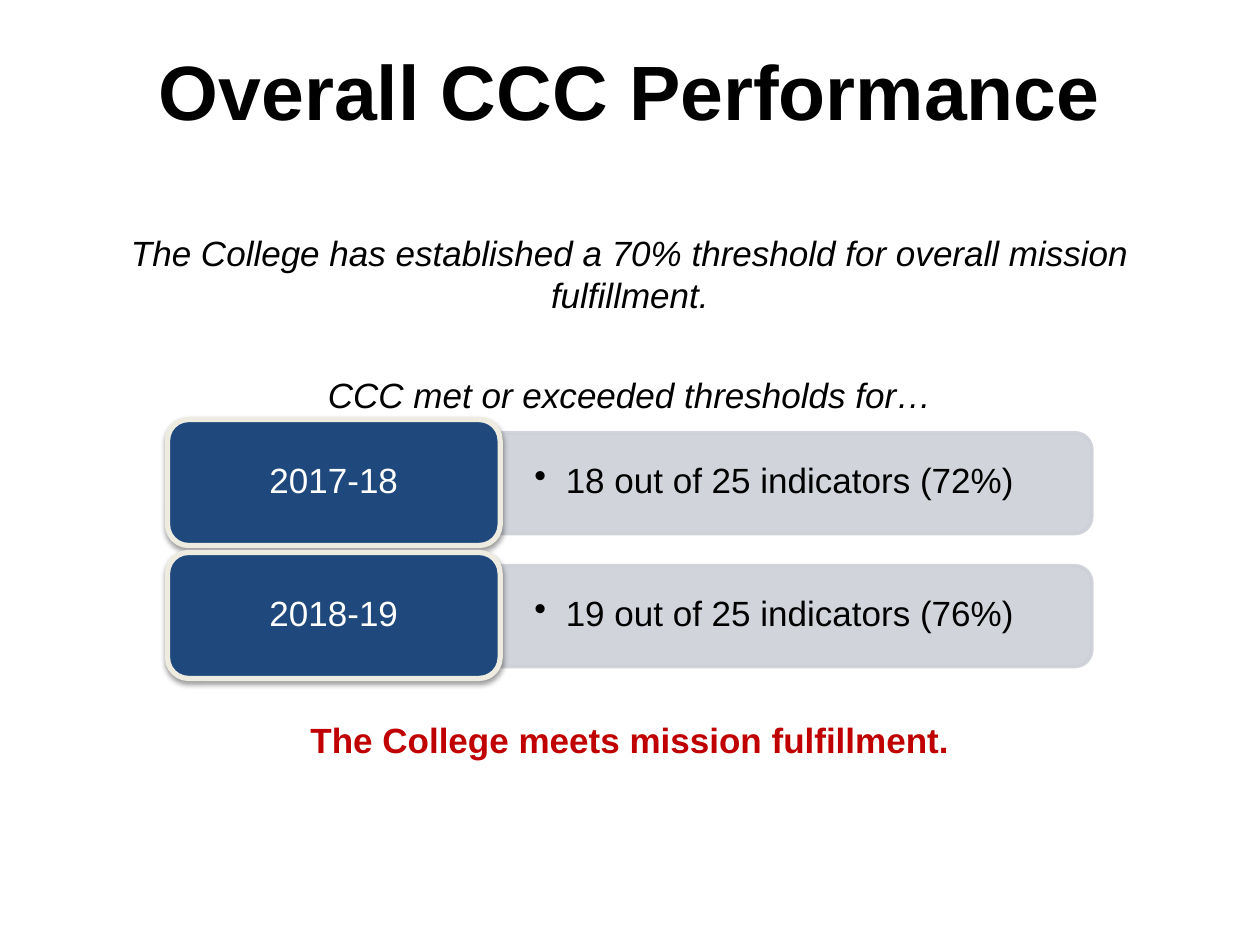
import pptx
import pptx.dml.color
import pptx.enum.shapes
import pptx.enum.text
import pptx.oxml
import pptx.oxml.ns
import pptx.util
import lxml.etree

Inches = pptx.util.Inches
Pt = pptx.util.Pt
qn = pptx.oxml.ns.qn
COLORS = {"black": "000000", "white": "FFFFFF", "red": "C00000",
          "navy": "1F497D", "cream": "EEECE1", "bar": "CDD0D7"}


def rgb(name):
    return pptx.dml.color.RGBColor.from_string(COLORS[name])


def write_text(paragraph, text, size=20, color="black", bold=False, italic=False,
               align="CENTER", before=0, line_spacing=1.0, bullet=False):
    paragraph.alignment = getattr(pptx.enum.text.PP_ALIGN, align)
    paragraph.space_before = Pt(before)
    paragraph.line_spacing = line_spacing
    if bullet:
        properties = paragraph._p.get_or_add_pPr()
        properties.set("marL", str(Inches(0.25)))
        properties.set("indent", str(Inches(-0.25)))
        lxml.etree.SubElement(properties, qn("a:buChar"), char="•")
    run = paragraph.add_run()
    run.text = text
    run.font.name = "Arial"
    run.font.size = Pt(size)
    run.font.bold = bold
    run.font.italic = italic
    run.font.color.rgb = rgb(color)


presentation = pptx.Presentation()
presentation.slide_width = Inches(10)
presentation.slide_height = Inches(7.5)
slide = presentation.slides.add_slide(presentation.slide_layouts[6])
shapes = slide.shapes

title = shapes.add_textbox(Inches(0.5), Inches(0.3), Inches(9), Inches(1.25))
title.text_frame.word_wrap = True
write_text(title.text_frame.paragraphs[0], "Overall CCC Performance", size=44, bold=True)

body = shapes.add_textbox(Inches(0.5), Inches(1.75), Inches(9), Inches(4.95))
body.text_frame.word_wrap = True
body.text_frame.margin_top = Inches(0.09)
write_text(body.text_frame.paragraphs[0],
           "The College has established a 70% threshold for overall mission fulfillment.",
           italic=True)
write_text(body.text_frame.add_paragraph(), "CCC met or exceeded thresholds for…",
           italic=True, before=33)
write_text(body.text_frame.add_paragraph(), "The College meets mission fulfillment.",
           color="red", bold=True, before=173)

results = [("2017-18", "18 out of 25 indicators (72%)"),
           ("2018-19", "19 out of 25 indicators (76%)")]
for row, (year, result) in enumerate(results):
    top = 3.33 + 1.055 * row

    bar = shapes.add_shape(pptx.enum.shapes.MSO_SHAPE.ROUND_2_SAME_RECTANGLE,
                           Inches(5.92), Inches(top - 1.84), Inches(0.8), Inches(4.69))
    bar.rotation = 90
    bar.shadow.inherit = False
    bar.fill.solid()
    bar.fill.fore_color.rgb = rgb("bar")
    bar.line.color.rgb = rgb("bar")
    bar.line.width = Pt(2)
    for color in bar._element.spPr.iter(qn("a:srgbClr")):
        lxml.etree.SubElement(color, qn("a:alpha"), val="90000")

    detail = shapes.add_textbox(Inches(3.97), Inches(top + 0.14), Inches(4.65), Inches(0.72))
    frame = detail.text_frame
    frame.word_wrap = True
    frame.vertical_anchor = pptx.enum.text.MSO_ANCHOR.MIDDLE
    frame.margin_left = frame.margin_right = Inches(0.27)
    frame.margin_top = frame.margin_bottom = Inches(0.14)
    write_text(frame.paragraphs[0], result, align="LEFT", line_spacing=0.9, bullet=True)

    card = shapes.add_shape(pptx.enum.shapes.MSO_SHAPE.ROUNDED_RECTANGLE,
                            Inches(1.33), Inches(top), Inches(2.64), Inches(1))
    card.shadow.inherit = False
    card.fill.solid()
    card.fill.fore_color.rgb = rgb("navy")
    card.line.color.rgb = rgb("cream")
    card.line.width = Pt(3)
    effects = card._element.spPr.find(qn("a:effectLst"))
    shadow = lxml.etree.SubElement(effects, qn("a:outerShdw"), blurRad=str(Pt(3.1)),
                                   dist=str(Pt(1.6)), dir="5400000", rotWithShape="0")
    shade = lxml.etree.SubElement(shadow, qn("a:srgbClr"), val=COLORS["black"])
    lxml.etree.SubElement(shade, qn("a:alpha"), val="38000")
    card.text_frame.word_wrap = True
    card.text_frame.vertical_anchor = pptx.enum.text.MSO_ANCHOR.MIDDLE
    write_text(card.text_frame.paragraphs[0], year, color="white", line_spacing=0.9)

presentation.save("out.pptx")
